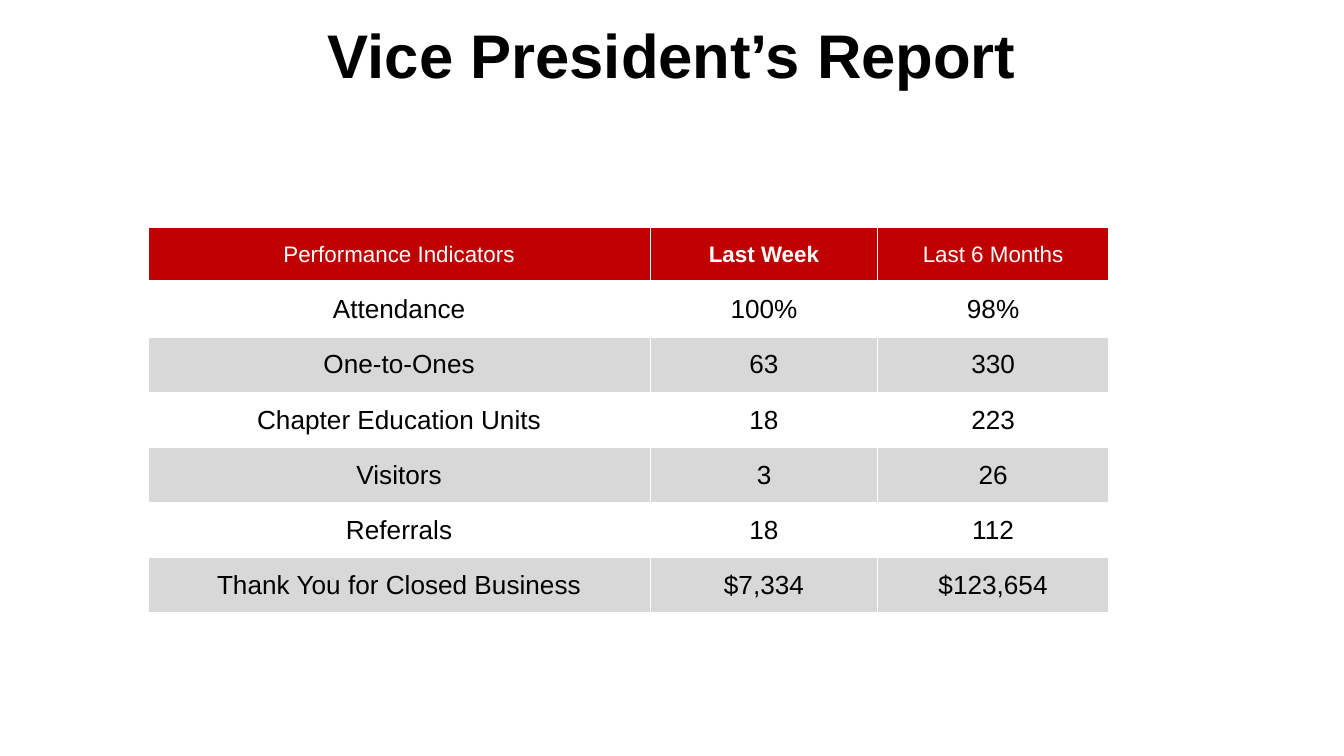
import pptx
import pptx.dml.color
import pptx.enum.text
import pptx.oxml
import pptx.oxml.ns
import pptx.util

Inches = pptx.util.Inches
Pt = pptx.util.Pt
CENTER = pptx.enum.text.PP_ALIGN.CENTER
MIDDLE = pptx.enum.text.MSO_ANCHOR.MIDDLE

WHITE, BLACK, RED, GRAY = "FFFFFF", "000000", "C00000", "D8D8D8"
WIDTHS = [3.74, 1.69, 1.72]
ROWS = [
    ["Performance Indicators", "Last Week", "Last 6 Months"],
    ["Attendance", "100%", "98%"],
    ["One-to-Ones", "63", "330"],
    ["Chapter Education Units", "18", "223"],
    ["Visitors", "3", "26"],
    ["Referrals", "18", "112"],
    ["Thank You for Closed Business", "$7,334", "$123,654"],
]


def color(code):
    return pptx.dml.color.RGBColor.from_string(code)


def style(para, size, code, bold):
    para.alignment = CENTER
    font = para.font
    font.name = "Arial"
    font.size = Pt(size)
    font.bold = bold
    font.color.rgb = color(code)


def border(cell, **widths):
    """Draw white cell edges; widths are points keyed by L, R, T and B."""
    props = cell._tc.get_or_add_tcPr()
    for side, width in widths.items():
        props.append(pptx.oxml.parse_xml(
            f'<a:ln{side} {pptx.oxml.ns.nsdecls("a")} w="{Pt(width)}">'
            f'<a:solidFill><a:srgbClr val="{WHITE}"/></a:solidFill></a:ln{side}>'
        ))


def add_title(slide, left, top, width, height):
    title = slide.shapes.title
    title.left, title.top = Inches(left), Inches(top)
    title.width, title.height = Inches(width), Inches(height)
    frame = title.text_frame
    frame.text = "Vice President’s Report"
    frame.word_wrap = True
    frame.auto_size = pptx.enum.text.MSO_AUTO_SIZE.NONE
    frame.vertical_anchor = MIDDLE
    frame.margin_left = frame.margin_right = Inches(0.07)
    frame.margin_top = frame.margin_bottom = Inches(0.04)
    para = frame.paragraphs[0]
    para.line_spacing = 0.9
    style(para, 33, BLACK, True)


def fill_cell(cell, text, row, col):
    head = row == 0
    border(cell, L=1, R=1, T=3 if row == 1 else 1, B=3 if head else 1)
    cell.fill.solid()
    cell.fill.fore_color.rgb = color(RED if head else WHITE if row % 2 else GRAY)
    cell.vertical_anchor = MIDDLE
    cell.text = text
    para = cell.text_frame.paragraphs[0]
    if head:
        style(para, 12, WHITE, col == 1)
    else:
        style(para, 14, BLACK, False)


def add_scores(slide, left, top, height):
    """Place the table of performance indicators."""
    table = slide.shapes.add_table(
        len(ROWS), len(WIDTHS), Inches(left), Inches(top),
        Inches(sum(WIDTHS)), Inches(height),
    ).table
    for column, width in zip(table.columns, WIDTHS):
        column.width = Inches(width)
    for row, texts in enumerate(ROWS):
        table.rows[row].height = Inches(height / len(ROWS))
        for col, text in enumerate(texts):
            fill_cell(table.cell(row, col), text, row, col)


def main():
    deck = pptx.Presentation()
    deck.slide_width = Inches(10)
    deck.slide_height = deck.slide_width * 9 // 16
    slide = deck.slides.add_slide(deck.slide_layouts.get_by_name("Title Only"))
    add_title(slide, 0.42, 0, 9.16, 0.87)
    add_scores(slide, 1.1, 1.69, 2.87)
    deck.save("out.pptx")


if __name__ == "__main__":
    main()
